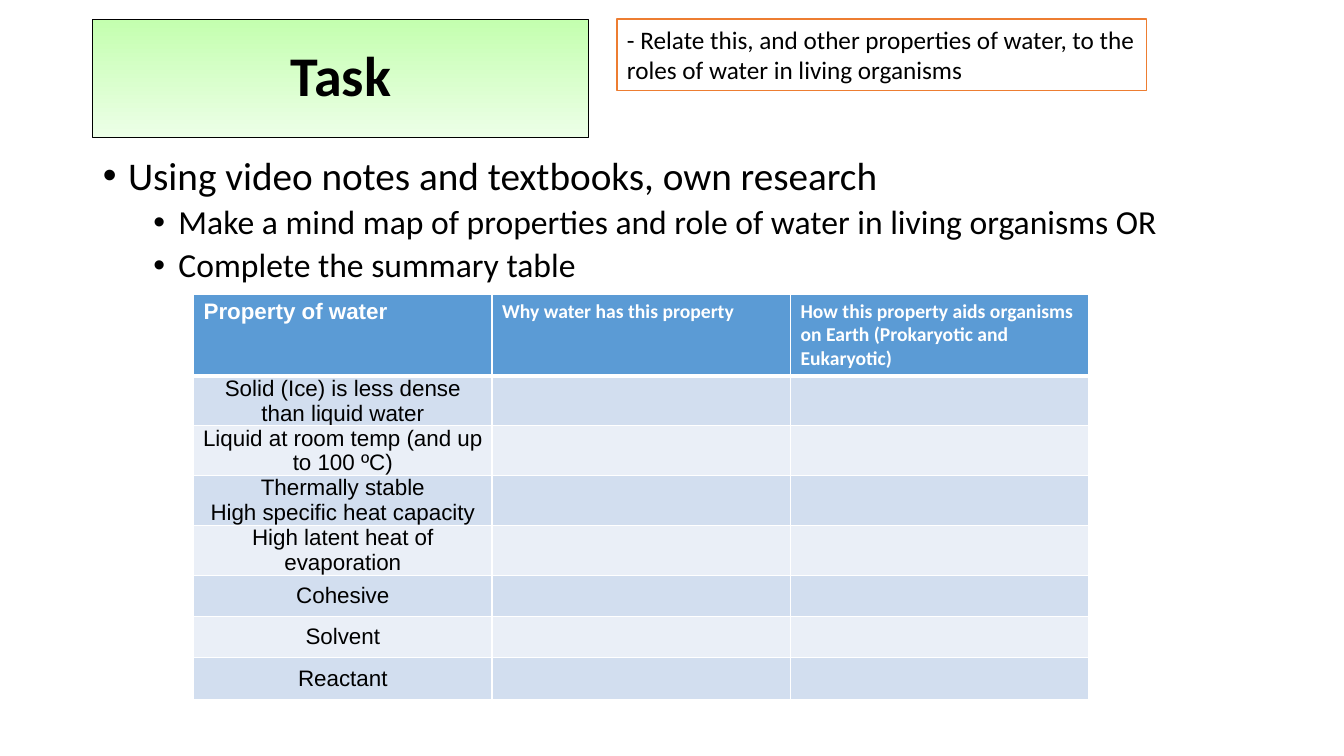
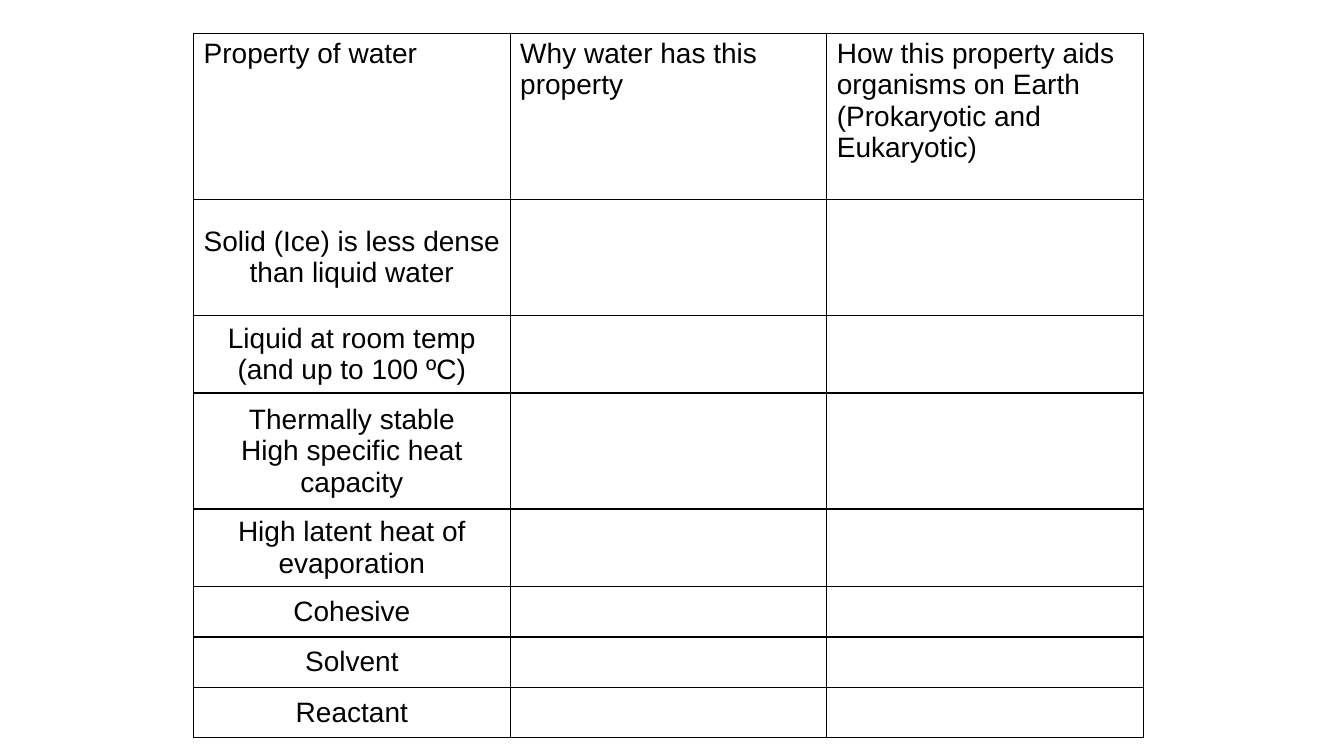
import pptx
import pptx.util
import pptx.dml.color
import pptx.enum.shapes
import pptx.enum.text
import pptx.oxml
import pptx.oxml.ns
import lxml.etree

Inches, Pt = pptx.util.Inches, pptx.util.Pt
RGBColor = pptx.dml.color.RGBColor
PP_ALIGN = pptx.enum.text.PP_ALIGN
MSO_ANCHOR = pptx.enum.text.MSO_ANCHOR
qn = pptx.oxml.ns.qn

BLACK = RGBColor(0x00, 0x00, 0x00)
WHITE = RGBColor(0xFF, 0xFF, 0xFF)
ORANGE = RGBColor(0xED, 0x7D, 0x31)
BLUE = RGBColor(0x5B, 0x9B, 0xD5)
BAND_DARK = RGBColor(0xD2, 0xDE, 0xEF)
BAND_LIGHT = RGBColor(0xEA, 0xEF, 0xF7)
GREEN_TOP = RGBColor(0xC4, 0xFF, 0xAF)
GREEN_BOTTOM = RGBColor(0xEC, 0xFF, 0xE7)

HEADERS = [
    "Property of water",
    "Why water has this property",
    "How this property aids organisms on Earth (Prokaryotic and Eukaryotic)",
]
PROPERTIES = [
    "Solid (Ice) is less dense than liquid water",
    "Liquid at room temp (and up to 100 ºC)",
    "Thermally stable\nHigh specific heat capacity",
    "High latent heat of evaporation",
    "Cohesive",
    "Solvent",
    "Reactant",
]


def format_text(tf, size, font="Calibri", color=BLACK, bold=False, **para):
    """Apply font values, and any paragraph values, to a whole text frame."""
    for p in tf.paragraphs:
        for name, value in para.items():
            setattr(p, name, value)
        for r in p.runs:
            values = {"size": Pt(size), "name": font, "bold": bold}
            for name, value in values.items():
                setattr(r.font, name, value)
            r.font.color.rgb = color


def add_property_table(slide, box, row_heights, header_fonts, size,
                       header_color, fills, line_color, header_rule):
    """Add the water property table; fills are header, odd and even rows."""
    rows, cols = len(PROPERTIES) + 1, len(HEADERS)
    table = slide.shapes.add_table(rows, cols, *map(Inches, box)).table
    table.first_row = table.horz_banding = False
    for row, height in zip(table.rows, row_heights):
        row.height = Inches(height)

    for i in range(rows):
        for j in range(cols):
            cell = table.cell(i, j)
            # Text
            if i == 0:
                cell.text = HEADERS[j]
                font, header_size, bold = header_fonts[j]
                format_text(cell.text_frame, header_size, font, header_color, bold)
            elif j == 0:
                cell.text = PROPERTIES[i - 1]
                format_text(cell.text_frame, size, "Arial",
                            alignment=PP_ALIGN.CENTER)
                values = {"vertical_anchor": MSO_ANCHOR.MIDDLE,
                          "margin_left": Inches(0.07), "margin_right": Inches(0.07),
                          "margin_top": 0, "margin_bottom": 0}
                for name, value in values.items():
                    setattr(cell, name, value)
            # Borders come before the fill in the cell properties
            tcPr = cell._tc.get_or_add_tcPr()
            for side in ("L", "R", "T", "B"):
                on_rule = (i, side) in ((0, "B"), (1, "T"))
                ln = lxml.etree.SubElement(tcPr, qn("a:ln" + side))
                ln.set("w", str(Pt(header_rule if on_rule else 1)))
                line_fill = lxml.etree.SubElement(ln, qn("a:solidFill"))
                lxml.etree.SubElement(line_fill, qn("a:srgbClr")).set("val", str(line_color))
            # Fill
            if fills:
                cell.fill.solid()
                cell.fill.fore_color.rgb = fills[0] if i == 0 else fills[2 - i % 2]
            else:
                cell.fill.background()


prs = pptx.Presentation()
prs.slide_width, prs.slide_height = Inches(13.33), Inches(7.5)

# Slide 1: task
slide = prs.slides.add_slide(prs.slide_layouts[1])
title, body = slide.shapes.title, slide.placeholders[1]
for sp, box in ((title, (0.92, 0.19, 4.92, 1.17)), (body, (0.92, 1.5, 11.5, 1.58))):
    for name, value in zip(("left", "top", "width", "height"), box):
        setattr(sp, name, Inches(value))
    sp.text_frame.auto_size = pptx.enum.text.MSO_AUTO_SIZE.NONE

# Title on a green gradient
title.text_frame.text = "Task"
title.text_frame.vertical_anchor = MSO_ANCHOR.MIDDLE
format_text(title.text_frame, 40, bold=True, alignment=PP_ALIGN.CENTER, line_spacing=0.9)
title.fill.gradient()
title.fill.gradient_angle = 270
for stop, color in zip(title.fill.gradient_stops, (GREEN_TOP, GREEN_BOTTOM)):
    stop.color.rgb = color
title.line.color.rgb = BLACK
title.line.width = Pt(0.75)

# Instructions
instructions = [
    (0, "Using video notes and textbooks, own research"),
    (1, "Make a mind map of properties and role of water in living organisms OR"),
    (1, "Complete the summary table"),
]
tf = body.text_frame
tf.text = "\n".join(text for level, text in instructions)
format_text(tf, 24, line_spacing=0.9)
for p, (level, text) in zip(tf.paragraphs, instructions):
    p.level = level
    p.space_before = Pt(5 if level else 10)
    if level == 0:
        p.runs[0].font.size = Pt(28)
    pPr = p._p.get_or_add_pPr()
    pPr.set("marL", str(Inches(0.25 + 0.5 * level)))
    pPr.set("indent", str(Inches(-0.25)))
    lxml.etree.SubElement(pPr, qn("a:buFont")).set("typeface", "Arial")
    lxml.etree.SubElement(pPr, qn("a:buChar")).set("char", "•")

# Objective box
sp = slide.shapes.add_shape(pptx.enum.shapes.MSO_SHAPE.RECTANGLE,
                            *map(Inches, (6.12, 0.19, 5.25, 0.71)))
sp.shadow.inherit = False
sp.fill.solid()
sp.fill.fore_color.rgb = WHITE
sp.line.color.rgb = ORANGE
sp.line.width = Pt(1)
tf = sp.text_frame
tf.word_wrap = True
tf.vertical_anchor = MSO_ANCHOR.TOP
tf.text = "- Relate this, and other properties of water, to the roles of water in living organisms"
format_text(tf, 18, alignment=PP_ALIGN.LEFT)

# Summary table
add_property_table(
    slide, (1.92, 2.92, 8.88, 3.28), [0.41] * 8,
    [("Arial", 16, True), ("Calibri", 14, True), ("Calibri", 14, True)], 16,
    WHITE, (BLUE, BAND_DARK, BAND_LIGHT), WHITE, 3)

# Slide 2: table to fill in
slide = prs.slides.add_slide(prs.slide_layouts[6])
add_property_table(
    slide, (1.92, 0.33, 9.42, 6.99), [1.65, 1.15, 0.77, 1.15, 0.77, 0.5, 0.5, 0.5],
    [("Arial", 20, False)] * 3, 20, BLACK, None, BLACK, 1)

prs.save("out.pptx")
